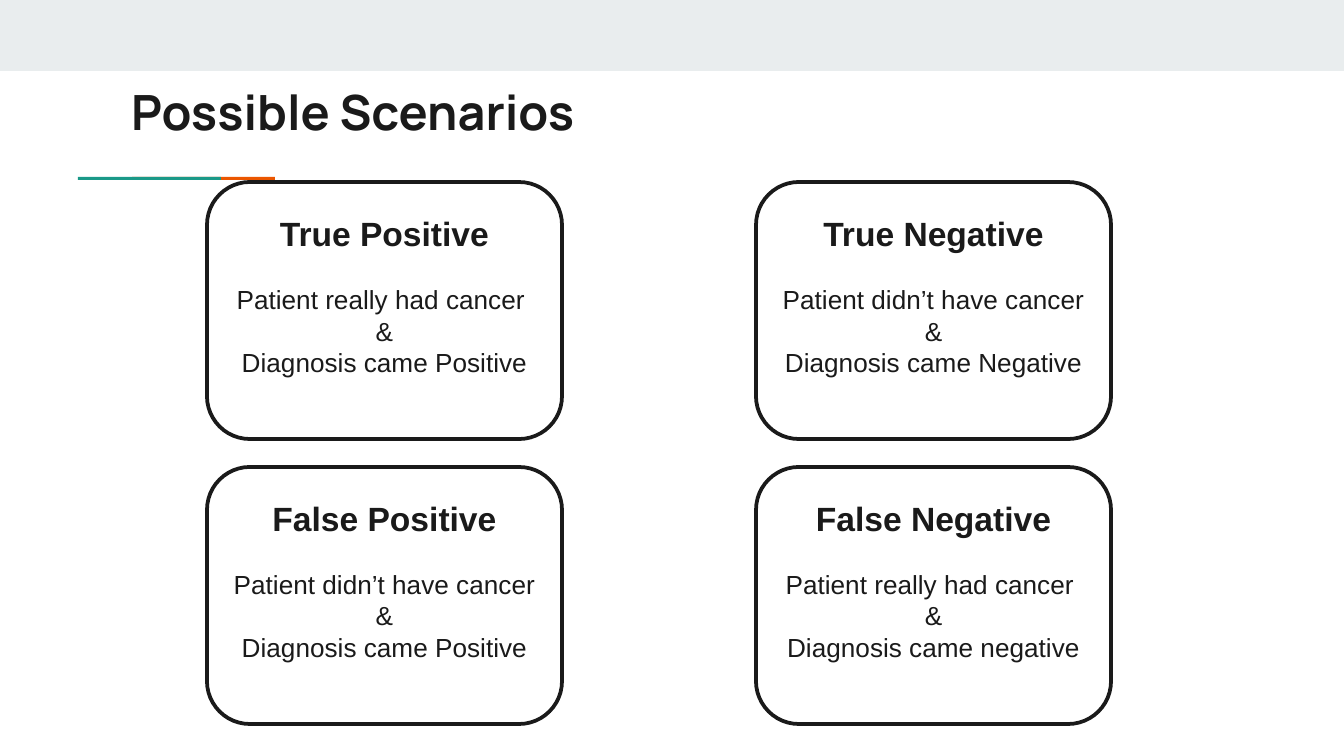
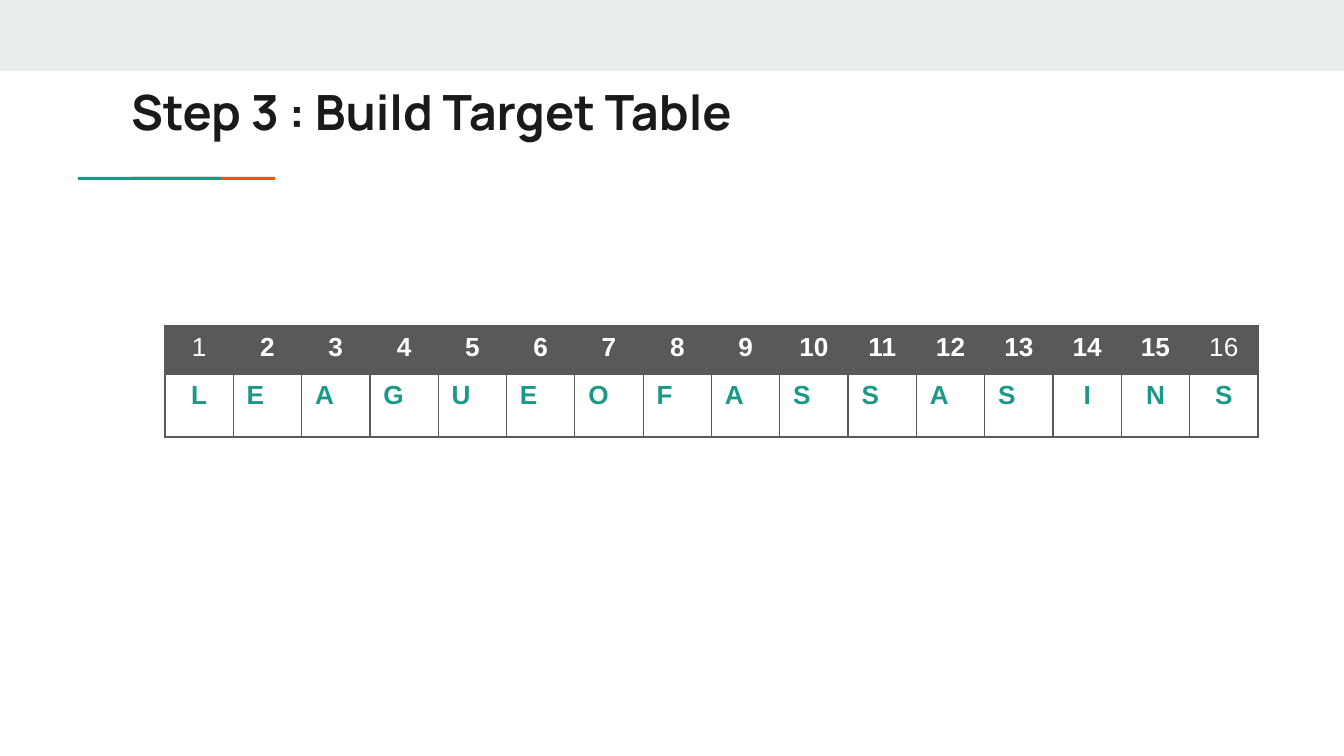
from lxml.etree import SubElement
from pptx import Presentation
from pptx.dml.color import RGBColor
from pptx.enum.shapes import MSO_SHAPE
from pptx.enum.text import MSO_ANCHOR, MSO_AUTO_SIZE, PP_ALIGN
from pptx.oxml.ns import qn
from pptx.util import Pt

INK, WHITE, GREY = "1A1A1A", "FFFFFF", "595959"
BAND, TEAL, ORANGE = "E9EDEE", "1A9988", "EB5600"
TITLE_FONT, BODY_FONT = "Manrope", "Arial"
SLIDE_W, SLIDE_H = 1344, 756


def px(n):
    return round(n * 914400 / 134.4)


def rgb(value):
    return RGBColor.from_string(value)


def add_run(p, text, size, color=INK, bold=False, font=BODY_FONT):
    r = p.add_run()
    r.text = text
    r.font.name, r.font.size, r.font.bold = font, Pt(size), bold
    r.font.color.rgb = rgb(color)


def set_insets(tf, left, top, right, bottom):
    tf.margin_left, tf.margin_top = px(left), px(top)
    tf.margin_right, tf.margin_bottom = px(right), px(bottom)


def add_box(s, kind, box, fill, line=None):
    sp = s.shapes.add_shape(kind, *map(px, box))
    sp.shadow.inherit = False
    sp.fill.solid()
    sp.fill.fore_color.rgb = rgb(fill)
    if line:
        sp.line.color.rgb = rgb(line)
        sp.line.width = Pt(2)
    else:
        sp.line.fill.background()
    return sp


def add_titled_slide(prs, title, width):
    s = prs.slides.add_slide(prs.slide_layouts[5])
    # Top band and the two overlapping accent bars
    add_box(s, MSO_SHAPE.RECTANGLE, (0, 0, SLIDE_W, 71), BAND)
    for left, color in ((132, ORANGE), (78, TEAL)):
        add_box(s, MSO_SHAPE.RECTANGLE, (left, 177, 143, 3), color)
    # Title
    sp = s.shapes.title
    sp.left, sp.top, sp.width, sp.height = map(px, (118, 75, width, 78))
    tf = sp.text_frame
    tf.word_wrap, tf.auto_size = True, MSO_AUTO_SIZE.NONE
    tf.vertical_anchor = MSO_ANCHOR.BOTTOM
    set_insets(tf, 13, 13, 13, 13)
    p = tf.paragraphs[0]
    p.alignment = PP_ALIGN.LEFT
    add_run(p, title, 26, bold=True, font=TITLE_FONT)
    return s


def add_card(s, box, heading, lines):
    sp = add_box(s, MSO_SHAPE.ROUNDED_RECTANGLE, box, WHITE, INK)
    tf = sp.text_frame
    tf.word_wrap = True
    tf.vertical_anchor = MSO_ANCHOR.MIDDLE
    set_insets(tf, 13, 7, 13, 37)
    p = tf.paragraphs[0]
    p.alignment = PP_ALIGN.CENTER
    add_run(p, heading, 18, bold=True)
    for i, line in enumerate(lines):
        p = tf.add_paragraph()
        p.alignment = PP_ALIGN.CENTER
        p.space_before = Pt(0 if i else 16)
        add_run(p, line, 14)


def add_cards(s, box, cards, columns=2):
    left, top, width, height = box
    card_w, card_h = 355, 257
    step_x, step_y = width - card_w, height - card_h
    for i, (heading, *lines) in enumerate(cards):
        row, col = divmod(i, columns)
        place = (left + col * step_x, top + row * step_y, card_w, card_h)
        add_card(s, place, heading, lines)


def set_borders(cell, color):
    tc_pr = cell._tc.get_or_add_tcPr()
    for side in ("lnL", "lnR", "lnT", "lnB"):
        ln = SubElement(tc_pr, qn(f"a:{side}"), w=str(Pt(0.75)))
        fill = SubElement(ln, qn("a:solidFill"))
        SubElement(fill, qn("a:srgbClr"), val=color)


def fill_cell(cell, text, fill, color, bold, centred):
    set_borders(cell, GREY)
    cell.fill.solid()
    cell.fill.fore_color.rgb = rgb(fill)
    p = cell.text_frame.paragraphs[0]
    p.alignment = PP_ALIGN.CENTER if centred else PP_ALIGN.LEFT
    add_run(p, text, 14, color, bold)


def add_letter_table(s, box, letters, row_heights):
    count = len(letters)
    table = s.shapes.add_table(2, count, *map(px, box)).table
    table.first_row = table.horz_banding = False
    for row, height in zip(table.rows, row_heights):
        row.height = px(height)
    for i, letter in enumerate(letters):
        table.columns[i].width = px(box[2]) // count
        inner = 0 < i < count - 1
        # Position on top, letter below
        fill_cell(table.cell(0, i), str(i + 1), GREY, WHITE, inner, True)
        fill_cell(table.cell(1, i), letter, WHITE, TEAL, True, i == 0 or i > 12)


def main():
    prs = Presentation()
    prs.slide_width, prs.slide_height = px(SLIDE_W), px(SLIDE_H)

    s = add_titled_slide(prs, "Possible Scenarios", 532)
    had, healthy = "Patient really had cancer ", "Patient didn’t have cancer "
    add_cards(s, (207, 182, 904, 542), [
        ("True Positive", had, "&", "Diagnosis came Positive"),
        ("True Negative", healthy, "&", "Diagnosis came Negative"),
        ("False Positive", healthy, "&", "Diagnosis came Positive"),
        ("False Negative", had, "&", "Diagnosis came negative"),
    ])

    s = add_titled_slide(prs, "Step 3 : Build Target Table", 1017)
    add_letter_table(s, (165, 326, 1093, 111), "LEAGUEOFASSASINS", (48, 63))

    prs.save("out.pptx")


if __name__ == "__main__":
    main()
